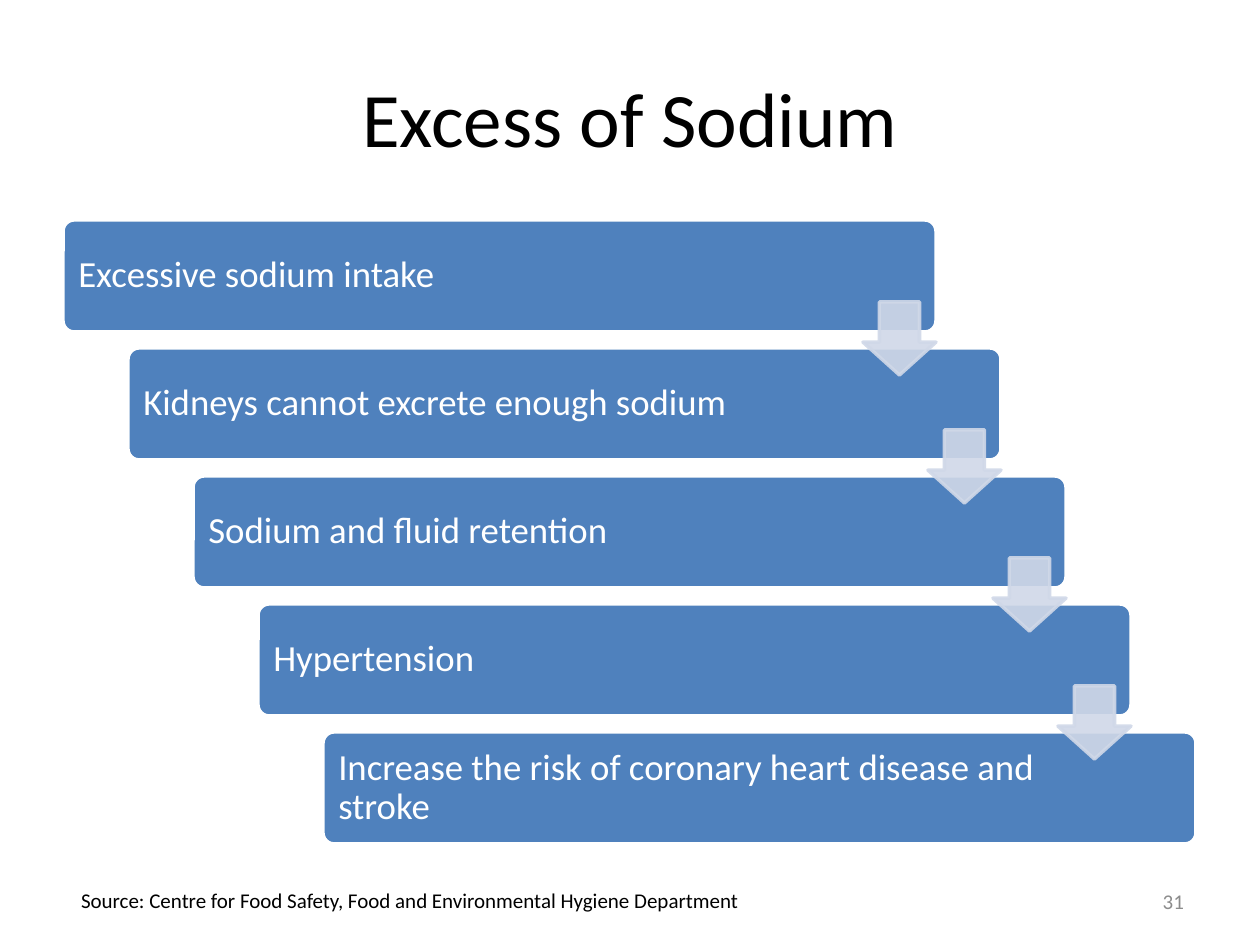
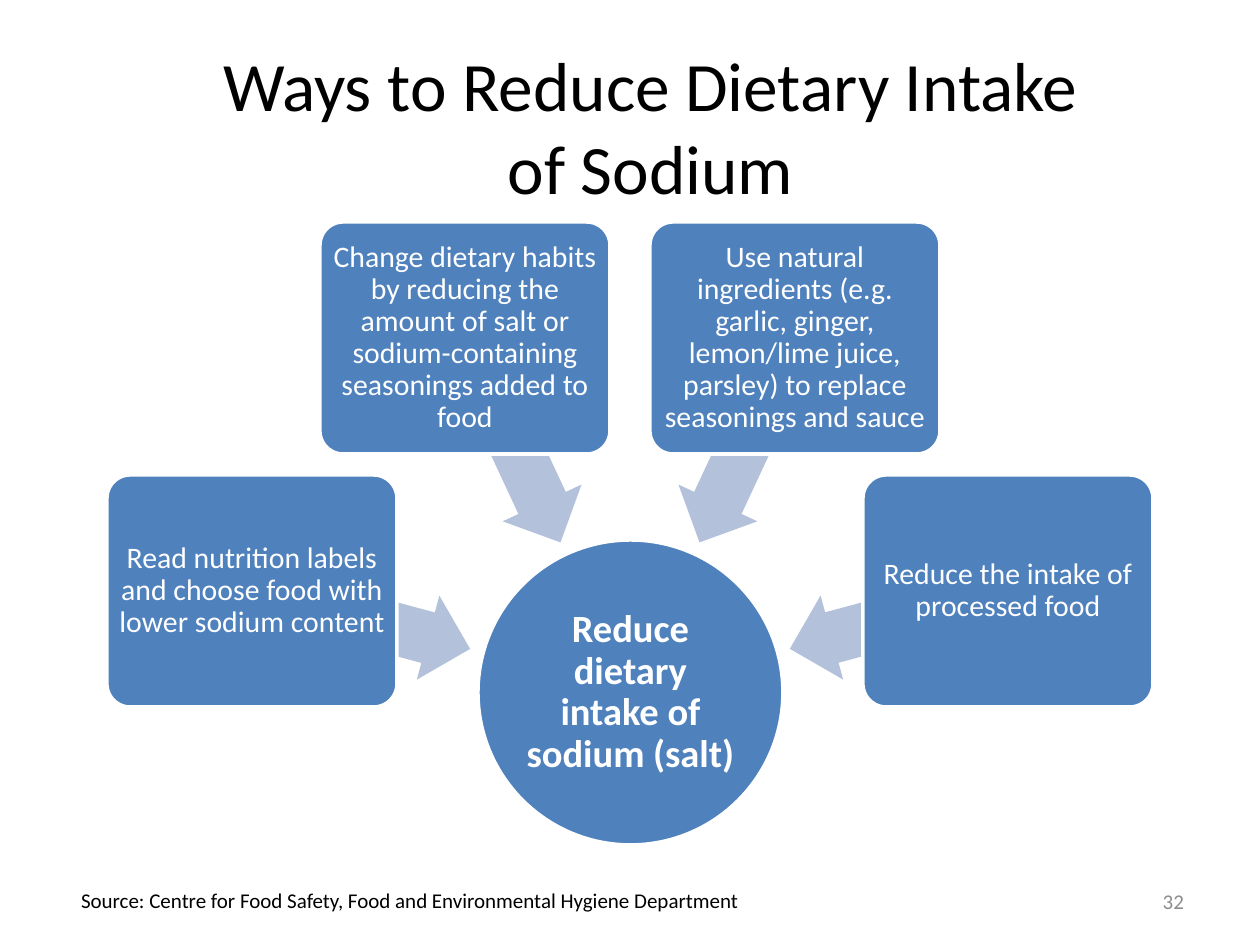
import math
from dataclasses import dataclass

import pptx
import pptx.dml.color
import pptx.enum.shapes
import pptx.enum.text
import pptx.oxml
import pptx.oxml.ns
import pptx.util

RGBColor = pptx.dml.color.RGBColor
MSO_SHAPE = pptx.enum.shapes.MSO_SHAPE
PP_ALIGN = pptx.enum.text.PP_ALIGN
MSO_ANCHOR = pptx.enum.text.MSO_ANCHOR

PX = 914400 / 126
FONT = "Calibri"
BLACK = RGBColor(0x00, 0x00, 0x00)
WHITE = RGBColor(0xFF, 0xFF, 0xFF)
BLUE = RGBColor(0x4F, 0x81, 0xBD)
STEP_ARROW = RGBColor(0xD0, 0xD8, 0xE8)
HUB_ARROW = RGBColor(0xB3, 0xC1, 0xDB)
GREY = RGBColor(0x8C, 0x8C, 0x8C)

SOURCE = "Source: Centre for Food Safety, Food and Environmental Hygiene Department"


@dataclass(frozen=True)
class Box:
    left: int
    top: int
    width: int
    height: int

    def emu(self) -> list[int]:
        return [round(v * PX) for v in (self.left, self.top, self.width, self.height)]


@dataclass(frozen=True)
class TextStyle:
    size: float
    color: RGBColor = WHITE
    bold: bool = False
    align: PP_ALIGN = PP_ALIGN.CENTER
    anchor: MSO_ANCHOR = MSO_ANCHOR.MIDDLE
    spacing: float = 1.0
    insets: tuple[int, int, int, int] = (13, 6, 13, 6)


@dataclass(frozen=True)
class ShapeStyle:
    kind: MSO_SHAPE
    fill: RGBColor
    line: RGBColor | None = None
    adjust: tuple[float, ...] = ()
    alpha: int = 100


TITLE = TextStyle(44, BLACK)
LONG_TITLE = TextStyle(39.6, BLACK)
NUMBER = TextStyle(12, GREY, align=PP_ALIGN.RIGHT)
CREDIT = TextStyle(12, BLACK, align=PP_ALIGN.LEFT, anchor=MSO_ANCHOR.TOP)
STEP_TEXT = TextStyle(21, align=PP_ALIGN.LEFT, spacing=0.9, insets=(12, 11, 151, 11))
CARD_TEXT = TextStyle(17, spacing=0.9, insets=(5, 5, 5, 5))
HUB_TEXT = TextStyle(22, bold=True, spacing=0.9, insets=(3, 3, 3, 3))

PANEL = ShapeStyle(MSO_SHAPE.ROUNDED_RECTANGLE, BLUE, WHITE, (0.1,))
HUB = ShapeStyle(MSO_SHAPE.OVAL, BLUE, WHITE)
DOWN = ShapeStyle(MSO_SHAPE.DOWN_ARROW, STEP_ARROW, STEP_ARROW, (0.55, 0.45), 90)
INWARD = ShapeStyle(MSO_SHAPE.LEFT_ARROW, HUB_ARROW, None, (0.6, 0.5))

STEPS = (
    "Excessive sodium intake",
    "Kidneys cannot excrete enough sodium",
    "Sodium and fluid retention",
    "Hypertension",
    "Increase the risk of coronary heart disease and stroke",
)
WAYS = (
    "Read nutrition labels and choose food with lower sodium content",
    "Change dietary habits by reducing the amount of salt or sodium-containing "
    "seasonings added to food",
    "Use natural ingredients (e.g. garlic, ginger, lemon/lime juice, parsley) "
    "to replace seasonings and sauce ",
    "Reduce the intake of processed food",
)


def set_all(target, values: dict) -> None:
    for name, value in values.items():
        setattr(target, name, value)


def write(sp, text: str, style: TextStyle) -> None:
    tf = sp.text_frame
    sides = ("margin_left", "margin_top", "margin_right", "margin_bottom")
    margins = {side: round(v * PX) for side, v in zip(sides, style.insets)}
    set_all(tf, {"word_wrap": True, "vertical_anchor": style.anchor,
                 "auto_size": pptx.enum.text.MSO_AUTO_SIZE.NONE, **margins})
    p = tf.paragraphs[0]
    set_all(p, {"alignment": style.align, "line_spacing": style.spacing})
    r = p.add_run()
    r.text = text
    set_all(r.font, {"name": FONT, "size": pptx.util.Pt(style.size), "bold": style.bold})
    r.font.color.rgb = style.color


def add_text(s, box: Box, text: str, style: TextStyle):
    sp = s.shapes.add_textbox(*box.emu())
    write(sp, text, style)
    return sp


def add_shape(s, box: Box, style: ShapeStyle, rotation: float = 0):
    sp = s.shapes.add_shape(style.kind, *box.emu())
    sp.shadow.inherit = False
    sp.rotation = rotation
    for i, value in enumerate(style.adjust):
        sp.adjustments[i] = value
    sp.fill.solid()
    sp.fill.fore_color.rgb = style.fill
    if style.line is None:
        sp.line.fill.background()
    else:
        sp.line.color.rgb = style.line
        sp.line.width = pptx.util.Pt(2)
    if style.alpha < 100:
        for color in sp._element.spPr.iter(pptx.oxml.ns.qn("a:srgbClr")):
            color.append(pptx.oxml.parse_xml(
                f'<a:alpha {pptx.oxml.ns.nsdecls("a")} val="{style.alpha * 1000}"/>'))
    return sp


def add_slide(prs, title: str, box: Box, style: TextStyle, number: int):
    """Add a slide with its title, slide number and source line."""
    s = prs.slides.add_slide(prs.slide_layouts[5])
    sp = s.shapes.title
    set_all(sp, dict(zip(("left", "top", "width", "height"), box.emu())))
    write(sp, title, style)
    add_text(s, Box(903, 876, 294, 50), str(number), NUMBER)
    credit = add_text(s, Box(68, 882, 1062, 38), SOURCE, CREDIT)
    credit.text_frame.auto_size = pptx.enum.text.MSO_AUTO_SIZE.SHAPE_TO_FIT_TEXT
    return s


def polar_box(angle: float, radius: int, width: int, height: int) -> Box:
    """Box centred at an angle and distance from the middle of the hub."""
    x = 630 + radius * math.cos(math.radians(angle))
    y = 692 + radius * math.sin(math.radians(angle))
    return Box(round(x - width / 2), round(y - height / 2), width, height)


def build_staircase(prs) -> None:
    s = add_slide(prs, "Excess of Sodium", Box(63, 38, 1134, 157), TITLE, 31)
    dx, dy = 65, 128
    for i, text in enumerate(STEPS):
        sp = add_shape(s, Box(63 + i * dx, 220 + i * dy, 873, 112), PANEL)
        write(sp, text, STEP_TEXT)
    for i in range(len(STEPS) - 1):
        add_shape(s, Box(863 + i * dx, 302 + i * dy, 73, 73), DOWN)


def build_hub(prs) -> None:
    s = add_slide(prs, "Ways to Reduce Dietary Intake of Sodium",
                  Box(203, 47, 895, 157), LONG_TITLE, 32)
    write(add_shape(s, Box(478, 540, 305, 305), HUB),
          "Reduce dietary intake of sodium (salt)", HUB_TEXT)
    for i, text in enumerate(WAYS):
        angle = 195 + 50 * i
        add_shape(s, polar_box(angle, 279, 227, 87), INWARD, angle)
        write(add_shape(s, polar_box(angle, 391, 290, 232), PANEL), text, CARD_TEXT)


def main() -> None:
    prs = pptx.Presentation()
    set_all(prs, {"slide_width": pptx.util.Inches(10), "slide_height": pptx.util.Inches(7.5)})
    build_staircase(prs)
    build_hub(prs)
    prs.save("out.pptx")


if __name__ == "__main__":
    main()
